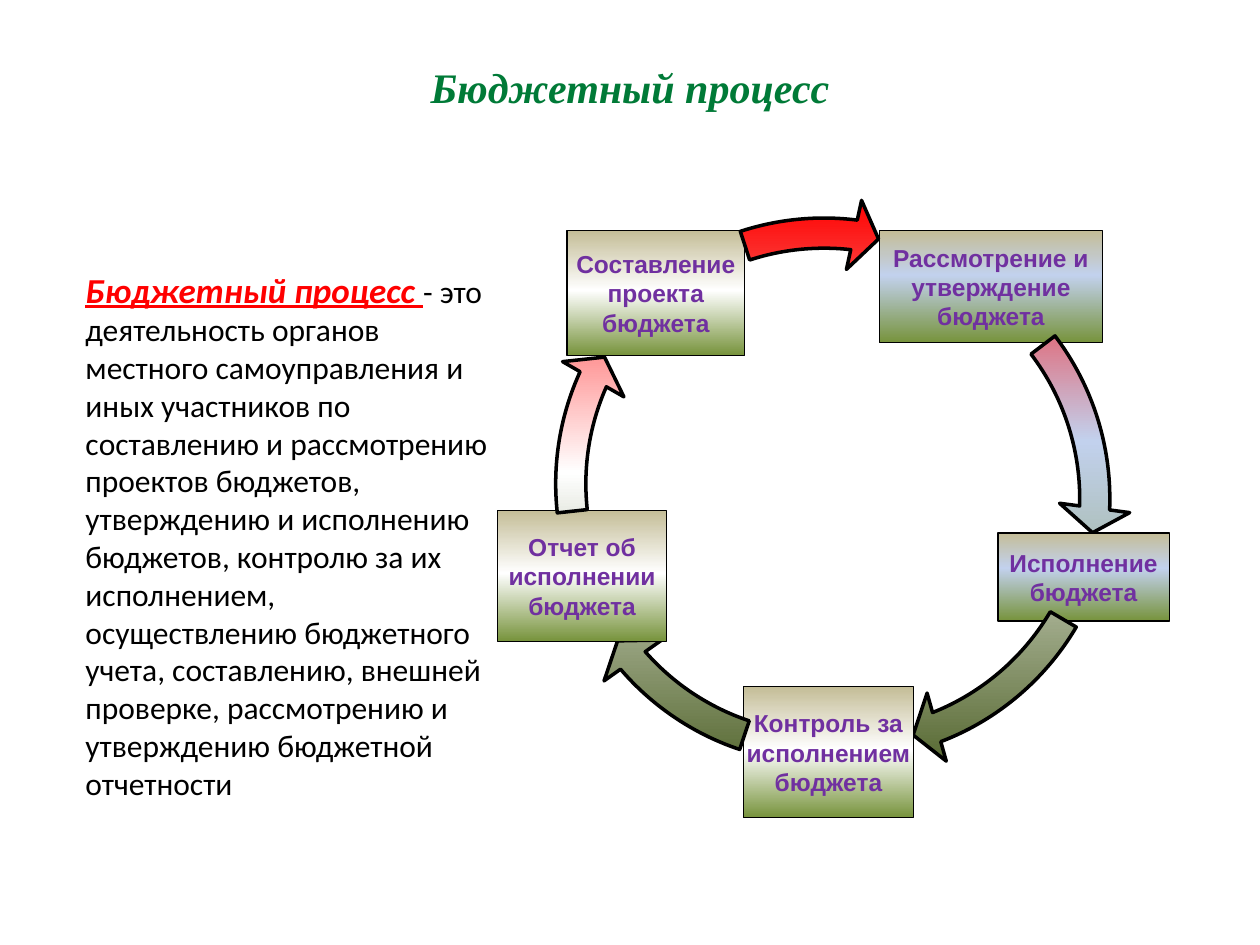
from dataclasses import dataclass

import lxml.etree
import pptx
import pptx.dml.color
import pptx.enum.shapes
import pptx.enum.text
import pptx.oxml
import pptx.oxml.ns
import pptx.util

RGB = pptx.dml.color.RGBColor
KIND = pptx.enum.shapes.MSO_SHAPE
ALIGN = pptx.enum.text.PP_ALIGN
ANCHOR = pptx.enum.text.MSO_ANCHOR
FIT = pptx.enum.text.MSO_AUTO_SIZE
Pt = pptx.util.Pt

PX = 9144  # 100 px to the inch
RING = 460
WIDTH, SWEEP, HEAD = 0.052, 3.36, 0.061

BLACK = RGB(0x00, 0x00, 0x00)
WHITE = RGB(0xFF, 0xFF, 0xFF)
RED = RGB(0xFF, 0x00, 0x00)
GREEN = RGB(0x00, 0x7A, 0x37)
PURPLE = RGB(0x70, 0x30, 0xA0)
SAND = RGB(0xC4, 0xBD, 0x97)
SKY = RGB(0xC2, 0xD1, 0xED)
CREAM = RGB(0xEE, 0xEC, 0xE1)
LEAF = RGB(0x77, 0x93, 0x3C)
MOSS = RGB(0x4F, 0x62, 0x28)

TITLE = dict(name="Times New Roman", size=Pt(24), bold=True, italic=True, color=GREEN)
STEP = dict(name="Arial", size=Pt(14), bold=True, color=PURPLE)
TERM = dict(name="Calibri", size=Pt(20), bold=True, italic=True, underline=True, color=RED)
BODY = dict(name="Calibri", size=Pt(18), color=BLACK)


@dataclass(frozen=True)
class Fade:
    """Three colours from top to bottom, the middle one at a percentage."""
    top: RGB
    mid: RGB
    low: RGB
    at: int


@dataclass(frozen=True)
class Step:
    text: str
    box: tuple[int, int, int, int]
    fade: Fade


@dataclass(frozen=True)
class Arrow:
    """A ring arrow; tip and tail are its angle adjustments."""
    left: int
    top: int
    tip: float
    tail: float
    fade: Fade


COOL = Fade(SAND, SKY, LEAF, 40)
WARM = Fade(SAND, WHITE, LEAF, 48)

CYCLE = [
    Step("Рассмотрение и утверждение бюджета", (698, 183, 177, 89), COOL),
    Arrow(437, 166, 1.227, 193.673, Fade(RED, SKY, LEAF, 40)),
    Step("Исполнение бюджета", (792, 423, 136, 70), COOL),
    Arrow(440, 159, 41.202, 18.322, Fade(RED, WHITE, MOSS, 40)),
    Step("Контроль за исполнением бюджета", (590, 545, 135, 104), WARM),
    Arrow(425, 162, 83.463, 65.103, Fade(RED, WHITE, MOSS, 40)),
    Step("Отчет об исполнении бюджета", (395, 405, 134, 104), WARM),
    Arrow(425, 154, 122.554, 104.282, Fade(RED, WHITE, MOSS, 48)),
    Step("Составление проекта бюджета", (450, 183, 141, 99), WARM),
    Arrow(424, 157, 166.064, 151.147, Fade(RED, CREAM, MOSS, 49)),
]

MEANING = (
    "- это деятельность органов местного самоуправления и иных участников по "
    "составлению и рассмотрению проектов бюджетов, утверждению и исполнению "
    "бюджетов, контролю за их исполнением, осуществлению бюджетного учета, "
    "составлению, внешней проверке, рассмотрению и утверждению бюджетной отчетности"
)


def emu(*sides: int) -> list[int]:
    return [side * PX for side in sides]


def write(para, text: str, style: dict) -> None:
    run = para.add_run()
    run.text = text
    for key, value in style.items():
        if key == "color":
            run.font.color.rgb = value
        else:
            setattr(run.font, key, value)


def paint(shape, fade: Fade, line: float) -> None:
    shape.shadow.inherit = False
    shape.line.color.rgb = BLACK
    shape.line.width = Pt(line)
    shape.fill.gradient()
    grad = shape.fill._fill._gradFill
    for child in list(grad):
        grad.remove(child)
    tag = pptx.oxml.ns.qn
    stops = lxml.etree.SubElement(grad, tag("a:gsLst"))
    for share, tone in ((0, fade.top), (fade.at, fade.mid), (100, fade.low)):
        stop = lxml.etree.SubElement(stops, tag("a:gs"), pos=str(share * 1000))
        lxml.etree.SubElement(stop, tag("a:srgbClr"), val=str(tone))
    lxml.etree.SubElement(grad, tag("a:lin"), ang="5400000", scaled="0")


def draw_step(slide, step: Step) -> None:
    shape = slide.shapes.add_shape(KIND.RECTANGLE, *emu(*step.box))
    paint(shape, step.fade, 0.75)
    frame = shape.text_frame
    inset = 2 * PX
    look = dict(margin_left=inset, margin_right=inset, margin_top=inset,
                margin_bottom=inset, word_wrap=True, vertical_anchor=ANCHOR.MIDDLE)
    for key, value in look.items():
        setattr(frame, key, value)
    para = frame.paragraphs[0]
    para.alignment = ALIGN.CENTER
    write(para, step.text, STEP)


def draw_arrow(slide, arrow: Arrow) -> None:
    place = emu(arrow.left, arrow.top, RING, RING)
    shape = slide.shapes.add_shape(KIND.CIRCULAR_ARROW, *place)
    for i, value in enumerate((WIDTH, SWEEP, arrow.tip, arrow.tail, HEAD)):
        shape.adjustments[i] = value
    paint(shape, arrow.fade, 2)


def draw_title(slide) -> None:
    title = slide.shapes.title
    title.left, title.top, title.width, title.height = emu(50, 30, 900, 78)
    title.text_frame.vertical_anchor = ANCHOR.MIDDLE
    para = title.text_frame.paragraphs[0]
    para.alignment = ALIGN.CENTER
    write(para, "Бюджетный процесс", TITLE)


def draw_text(slide) -> None:
    frame = slide.shapes.add_textbox(*emu(58, 208, 342, 468)).text_frame
    frame.word_wrap = True
    frame.auto_size = FIT.SHAPE_TO_FIT_TEXT
    para = frame.paragraphs[0]
    write(para, "Бюджетный процесс ", TERM)
    write(para, MEANING, BODY)


def main() -> None:
    deck = pptx.Presentation()
    deck.slide_width, deck.slide_height = emu(1000, 750)
    slide = deck.slides.add_slide(deck.slide_layouts[5])
    for part in CYCLE:
        if isinstance(part, Step):
            draw_step(slide, part)
        else:
            draw_arrow(slide, part)
    draw_title(slide)
    draw_text(slide)
    deck.save("out.pptx")


if __name__ == "__main__":
    main()
